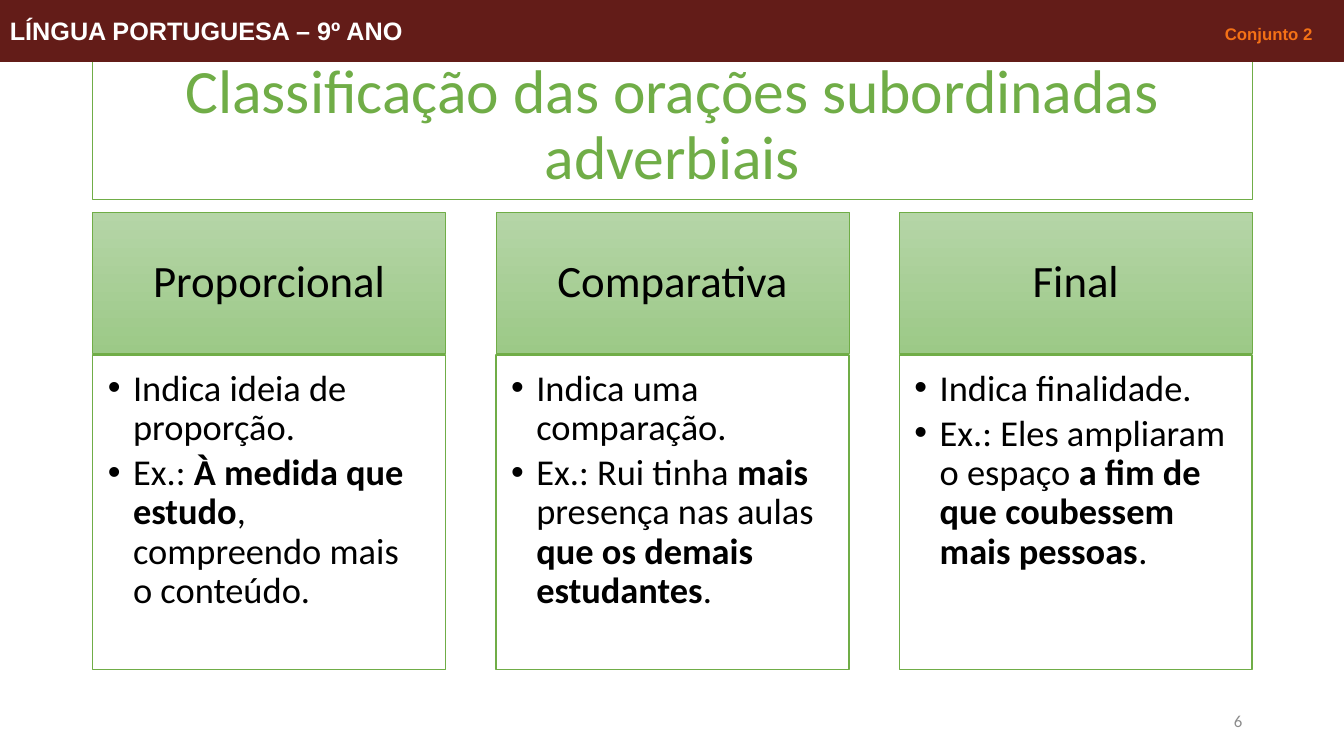
"""Build the slide on the classification of adverbial subordinate clauses."""
from dataclasses import dataclass

from lxml import etree
from pptx import Presentation
from pptx.dml.color import RGBColor
from pptx.enum.shapes import MSO_SHAPE
from pptx.enum.text import MSO_ANCHOR, MSO_AUTO_SIZE, PP_ALIGN
from pptx.oxml.ns import qn
from pptx.util import Inches, Pt

RECT = MSO_SHAPE.RECTANGLE
TOP, MIDDLE = MSO_ANCHOR.TOP, MSO_ANCHOR.MIDDLE
LEFT, CENTER, RIGHT = PP_ALIGN.LEFT, PP_ALIGN.CENTER, PP_ALIGN.RIGHT
NO_FIT = MSO_AUTO_SIZE.NONE


@dataclass(frozen=True)
class Theme:
    """Colours, fonts and type sizes."""
    green: str = "70AD47"
    head_top: str = "B5D5A7"
    head_bottom: str = "9CC987"
    maroon: str = "631C18"
    orange: str = "F47116"
    white: str = "FFFFFF"
    black: str = "000000"
    grey: str = "8C8C8C"
    body_font: str = "Calibri"
    banner_font: str = "Arial"
    title_size: int = 44
    head_size: int = 32
    list_size: int = 26
    banner_size: int = 18
    small_size: int = 12


@dataclass(frozen=True)
class Style:
    """Look of a text run."""
    size: int
    color: str
    font: str
    bold: bool = False


@dataclass(frozen=True)
class Clause:
    """A clause type, its meaning and an example as (text, bold) parts."""
    name: str
    meaning: str
    example: tuple[tuple[str, bool], ...]


THEME = Theme()
MARGIN, COL_W, COL_GAP = 0.92, 3.5, 0.5
HEAD_Y, HEAD_H, LIST_Y, LIST_H = 2.11, 1.4, 3.52, 3.12
CLAUSES = (
    Clause("Proporcional", "Indica ideia de proporção.",
           (("Ex.: ", False), ("À medida que estudo", True),
            (", compreendo mais o conteúdo.", False))),
    Clause("Comparativa", "Indica uma comparação.",
           (("Ex.: Rui tinha ", False), ("mais", True),
            (" presença nas aulas ", False),
            ("que os demais estudantes", True), (".", False))),
    Clause("Final", "Indica finalidade.",
           (("Ex.: Eles ampliaram o espaço ", False),
            ("a fim de que coubessem mais pessoas", True), (".", False))),
)


def rgb(color: str) -> RGBColor:
    """Turn a hex string into a colour."""
    return RGBColor.from_string(color)


def add_run(p, text: str, style: Style) -> None:
    """Append one styled run to a paragraph."""
    r = p.add_run()
    r.text = text
    r.font.name = style.font
    r.font.size = Pt(style.size)
    r.font.bold = style.bold
    r.font.color.rgb = rgb(style.color)


def set_line(s, color: str, width: float) -> None:
    """Outline a shape."""
    s.line.color.rgb = rgb(color)
    s.line.width = Pt(width)


def add_box(slide, x: float, y: float, w: float, h: float,
            fill: str, line: str, width: float):
    """Draw a flat rectangle without shadow."""
    s = slide.shapes.add_shape(RECT, Inches(x), Inches(y), Inches(w), Inches(h))
    s.shadow.inherit = False
    s.fill.solid()
    s.fill.fore_color.rgb = rgb(fill)
    set_line(s, line, width)
    return s


def set_frame(tf, anchor, insets=(0.1, 0.05, 0.1, 0.05)) -> None:
    """Set wrapping, anchor and insets of a text frame."""
    tf.word_wrap = True
    tf.auto_size = NO_FIT
    tf.vertical_anchor = anchor
    tf.margin_left, tf.margin_top, tf.margin_right, tf.margin_bottom = map(Inches, insets)


def set_paragraph(p, align, after: float = 0, spacing: float = 0.9) -> None:
    """Set alignment and spacing of a paragraph."""
    p.alignment = align
    p.line_spacing = spacing
    p.space_before = Pt(0)
    p.space_after = Pt(after)


def add_bullet(p, indent: float) -> None:
    """Give a paragraph a hanging bullet."""
    pPr = p._p.get_or_add_pPr()
    pPr.set("marL", str(Inches(indent)))
    pPr.set("indent", str(-Inches(indent)))
    etree.SubElement(pPr, qn("a:buFont")).set("typeface", THEME.banner_font)
    etree.SubElement(pPr, qn("a:buChar")).set("char", "•")


def add_right_tab(p, position: float) -> None:
    """Add a right-aligned tab stop."""
    tabs = etree.SubElement(p._p.get_or_add_pPr(), qn("a:tabLst"))
    etree.SubElement(tabs, qn("a:tab"), pos=str(Inches(position)), algn="r")


def add_title(slide) -> None:
    """Fill and place the title placeholder."""
    s = slide.shapes.title
    s.left, s.top, s.width, s.height = map(Inches, (MARGIN, 0.53, 11.5, 1.45))
    set_line(s, THEME.green, 0.75)
    set_frame(s.text_frame, MIDDLE)
    p = s.text_frame.paragraphs[0]
    set_paragraph(p, CENTER)
    add_run(p, "Classificação das orações subordinadas adverbiais",
            Style(THEME.title_size, THEME.green, THEME.body_font))


def add_clause(slide, x: float, clause: Clause) -> None:
    """Draw one column: gradient heading above a bulleted list."""
    s = add_box(slide, x, HEAD_Y, COL_W, HEAD_H, THEME.head_top, THEME.green, 0.5)
    s.fill.gradient()
    s.fill.gradient_angle = 270
    for stop, color in zip(s.fill.gradient_stops, (THEME.head_top, THEME.head_bottom)):
        stop.color.rgb = rgb(color)
    set_frame(s.text_frame, MIDDLE, (0.25, 0.14, 0.25, 0.14))
    p = s.text_frame.paragraphs[0]
    set_paragraph(p, CENTER)
    add_run(p, clause.name, Style(THEME.head_size, THEME.black, THEME.body_font))

    s = add_box(slide, x, LIST_Y, COL_W, LIST_H, THEME.white, THEME.green, 1)
    tf = s.text_frame
    set_frame(tf, TOP, (0.15, 0.15, 0.2, 0.23))
    items = (((clause.meaning, False),), clause.example)
    for i, parts in enumerate(items):
        p = tf.add_paragraph() if i else tf.paragraphs[0]
        set_paragraph(p, LEFT, after=4)
        add_bullet(p, 0.25)
        for text, bold in parts:
            add_run(p, text, Style(THEME.list_size, THEME.black, THEME.body_font, bold))


def add_page_number(slide) -> None:
    """Write the page number at the bottom right."""
    s = slide.shapes.add_textbox(Inches(9.42), Inches(6.95), Inches(3), Inches(0.4))
    set_frame(s.text_frame, MIDDLE)
    p = s.text_frame.paragraphs[0]
    set_paragraph(p, RIGHT, spacing=1.0)
    add_run(p, "6", Style(THEME.small_size, THEME.grey, THEME.body_font))


def add_banner(slide) -> None:
    """Draw the top banner with the subject and the set name."""
    s = add_box(slide, 0, 0, 13.33, 0.61, THEME.maroon, THEME.maroon, 0.75)
    set_frame(s.text_frame, MIDDLE)
    p = s.text_frame.paragraphs[0]
    set_paragraph(p, LEFT, spacing=1.0)
    add_right_tab(p, 12.92)
    add_run(p, "LÍNGUA PORTUGUESA – 9º ANO\t",
            Style(THEME.banner_size, THEME.white, THEME.banner_font, True))
    add_run(p, "Conjunto 2", Style(THEME.small_size, THEME.orange, THEME.banner_font, True))


def main() -> None:
    """Build and save the presentation."""
    prs = Presentation()
    prs.slide_width, prs.slide_height = Inches(13.33), Inches(7.5)
    slide = prs.slides.add_slide(prs.slide_layouts[5])
    add_title(slide)
    for i, clause in enumerate(CLAUSES):
        add_clause(slide, MARGIN + i * (COL_W + COL_GAP), clause)
    add_page_number(slide)
    add_banner(slide)
    prs.save("out.pptx")


if __name__ == "__main__":
    main()
